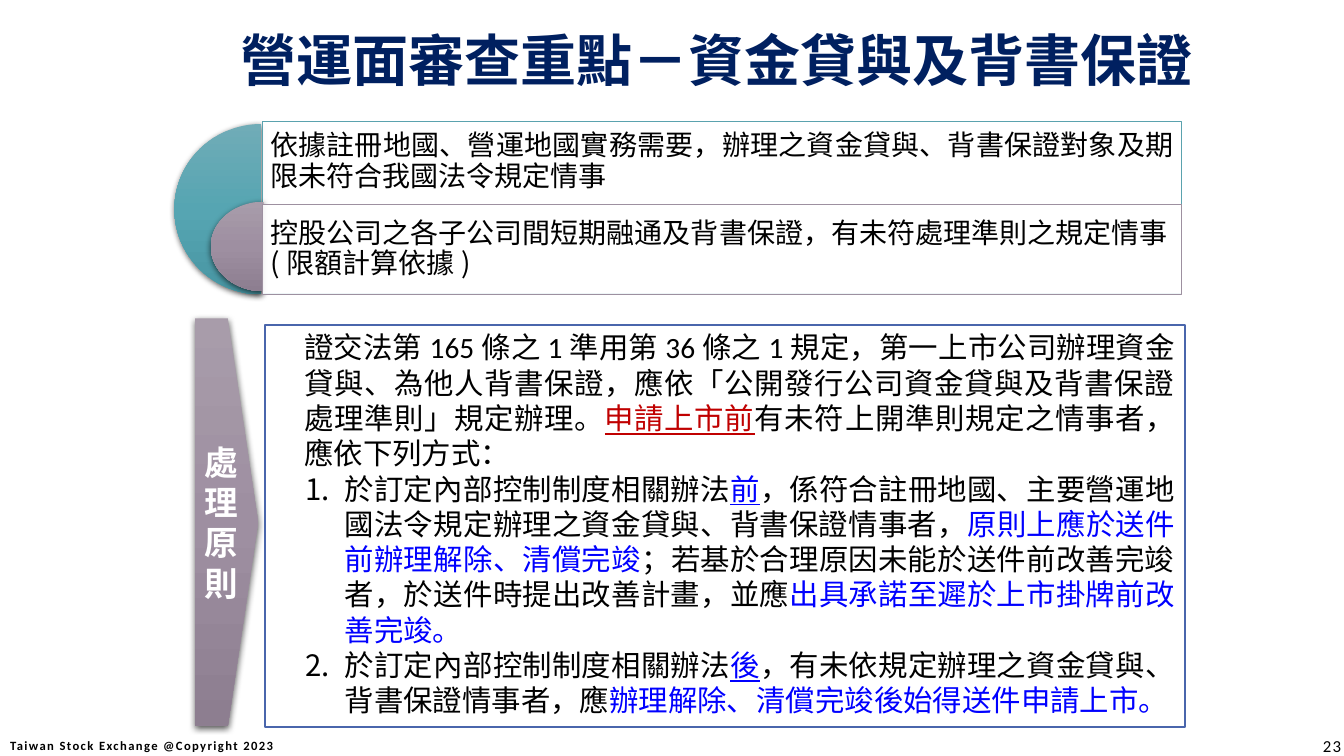
from copy import deepcopy

from lxml.etree import SubElement
from pptx import Presentation
from pptx.dml.color import RGBColor
from pptx.enum.shapes import MSO_SHAPE as Shape
from pptx.enum.text import MSO_ANCHOR as Anchor, PP_ALIGN as Align
from pptx.oxml.ns import qn
from pptx.util import Inches, Pt

BLACK = RGBColor(0x00, 0x00, 0x00)
WHITE = RGBColor(0xFF, 0xFF, 0xFF)
NAVY = RGBColor(0x00, 0x20, 0x60)
RED = RGBColor(0xC0, 0x00, 0x00)
BLUE = RGBColor(0x00, 0x00, 0xFF)
FRAME_BLUE = RGBColor(0x4A, 0x66, 0xAC)
TEAL = RGBColor(0x5A, 0xA2, 0xAE)
MAUVE = RGBColor(0x9D, 0x90, 0xA0)
TEAL_SHADES = [RGBColor(0x70, 0xAC, 0xB7), RGBColor(0x56, 0xA5, 0xB2), RGBColor(0x48, 0x96, 0xA3)]
MAUVE_SHADES = [RGBColor(0xA8, 0x9C, 0xAA), RGBColor(0x9E, 0x8F, 0xA1), RGBColor(0x8D, 0x7E, 0x90)]
CJK = "Noto Sans CJK SC"


def add_run(paragraph, text, size=21, font="Calibri", color=BLACK, bold=False,
            underline=False, spacing=0):
    run = paragraph.add_run()
    run.text = text
    run.font.size = Pt(size)
    run.font.name = font
    run.font.color.rgb = color
    run.font.bold = bold
    run.font.underline = underline
    properties = run.font._element
    if spacing:
        properties.set("spc", str(spacing * 100))
    SubElement(properties, qn("a:ea")).set("typeface", CJK)


def set_text(shape, runs, align=Align.CENTER, line_spacing=None, inset=None, **style):
    """Fill a shape with one paragraph; each run is (text, own format)."""
    frame = shape.text_frame
    frame.word_wrap = True
    frame.vertical_anchor = Anchor.MIDDLE
    if inset:
        frame.margin_left = frame.margin_right = Inches(inset)
        frame.margin_top = frame.margin_bottom = Inches(inset)
    paragraph = frame.paragraphs[0]
    paragraph.alignment = align
    paragraph.line_spacing = line_spacing
    for text, own in runs:
        add_run(paragraph, text, **{**style, **own})


def add_textbox(slide, box, text, **style):
    textbox = slide.shapes.add_textbox(*map(Inches, box))
    set_text(textbox, [(text, {})] if isinstance(text, str) else text, **style)


def add_shape(slide, kind, box, line=None, width=0.5):
    shape = slide.shapes.add_shape(kind, *map(Inches, box))
    shape.shadow.inherit = False
    shape.fill.background()
    if line is None:
        shape.line.fill.background()
    else:
        shape.line.color.rgb = line
        shape.line.width = Pt(width)
    return shape


def shade(shape, colors):
    """Vertical three-colour gradient with a soft shadow below."""
    shape.fill.gradient()
    shape.fill.gradient_angle = 270
    properties = shape._element.spPr
    stop_list = properties.find(".//" + qn("a:gsLst"))
    stop_list.insert(1, deepcopy(stop_list[0]))
    for index, (stop, color) in enumerate(zip(shape.fill.gradient_stops, colors)):
        stop.position = index / 2
        stop.color.rgb = color
    shadow = SubElement(properties.find(qn("a:effectLst")), qn("a:outerShdw"),
                        blurRad=str(Pt(4.5)), dist=str(Pt(1.5)), dir="5400000", rotWithShape="0")
    color = SubElement(shadow, qn("a:srgbClr"), val="000000")
    SubElement(color, qn("a:alpha"), val="63000")


def add_review_point(slide, pie_box, panel_box, text_height, shades, line, text):
    """Half disc with a bordered panel and its text."""
    pie = add_shape(slide, Shape.PIE, pie_box)
    pie.adjustments[0], pie.adjustments[1] = 54, 162
    shade(pie, shades)
    panel = add_shape(slide, Shape.RECTANGLE, panel_box, line)
    panel.fill.solid()
    panel.fill.fore_color.rgb = WHITE
    color = panel.fill._xPr.find(".//" + qn("a:srgbClr"))
    SubElement(color, qn("a:alpha"), val="90000")
    add_textbox(slide, (*panel_box[:3], text_height), text, align=Align.JUSTIFY,
                line_spacing=0.9, inset=0.08, size=20, font=CJK)


def add_principles(slide, left, top):
    # Arrow label
    arrow = add_shape(slide, Shape.PENTAGON, (left, top, 0.63, 4.04))
    arrow.adjustments[0] = 0.476
    shade(arrow, MAUVE_SHADES)
    set_text(arrow, [("處理原則", {})], size=24, font=CJK, color=WHITE, bold=True)

    # Framed explanation: an introduction and two numbered rules
    frame = add_shape(slide, Shape.RECTANGLE, (left + 0.7, top + 0.06, 9.12, 3.99),
                      FRAME_BLUE, 1.5).text_frame
    frame.word_wrap = True
    frame.vertical_anchor = Anchor.TOP
    for index, runs in enumerate(PRINCIPLES):
        paragraph = frame.paragraphs[0] if index == 0 else frame.add_paragraph()
        paragraph.alignment = Align.JUSTIFY
        properties = paragraph._p.get_or_add_pPr()
        properties.set("marL", str(Inches(0.69 if index else 0.29)))
        properties.set("indent", str(Inches(-0.39 if index else 0)))
        if index:
            SubElement(properties, qn("a:buFont"), typeface="+mj-lt")
            SubElement(properties, qn("a:buAutoNum"), type="arabicPeriod")
        for text, style in runs:
            add_run(paragraph, text, **style)


PLAIN = {}
STRESS = {"color": BLUE}
KEY = {"color": BLUE, "underline": True}
PRINCIPLES = [
    [("證交法第165條之1準用第36條之1規定，第一上市公司辦理資金貸與、為他人背書保證，"
      "應依「公開發行公司資金貸與及背書保證處理準則」規定辦理。", PLAIN),
     ("申請上市前", {"color": RED, "underline": True}),
     ("有未符上開準則規定之情事者，應依下列方式：", PLAIN)],
    [("於訂定內部控制制度相關辦法", PLAIN), ("前", KEY),
     ("，係符合註冊地國、主要營運地國法令規定辦理之資金貸與、背書保證情事者，", PLAIN),
     ("原則上應於送件前辦理解除、清償完竣", STRESS),
     ("；若基於合理原因未能於送件前改善完竣者，於送件時提出改善計畫，並應", PLAIN),
     ("出具承諾至遲於上市掛牌前改善完竣。", STRESS)],
    [("於訂定內部控制制度相關辦法", PLAIN), ("後", KEY),
     ("，有未依規定辦理之資金貸與、背書保證情事者，應", PLAIN),
     ("辦理解除、清償完竣後始得送件申請上市。", STRESS)],
]


def main():
    presentation = Presentation()
    presentation.slide_width, presentation.slide_height = Inches(13.33), Inches(7.5)
    slide = presentation.slides.add_slide(presentation.slide_layouts[6])

    # Footer and title
    add_textbox(slide, (-0.14, 7.2, 3.09, 0.4), "Taiwan Stock Exchange @Copyright 2023",
                size=9, bold=True, spacing=1)
    add_textbox(slide, (12.81, 7.2, 0.59, 0.4), "23", align=Align.RIGHT, size=12, spacing=1)
    add_textbox(slide, (2.03, 0.27, 10.15, 0.63),
                [("營運面審查重點", {}), ("－", {"font": CJK}), ("資金貸與及背書保證", {})],
                size=40, font="Vollkorn", color=NAVY, bold=True)

    # Review points
    add_review_point(slide, (1.73, 1.23, 1.72, 1.69), (2.6, 1.2, 9.12, 1.71), 0.81,
                     TEAL_SHADES, TEAL,
                     "依據註冊地國、營運地國實務需要，辦理之資金貸與、背書保證對象及期限未符合我國法令規定情事")
    add_review_point(slide, (2.09, 2, 1.05, 0.89), (2.6, 2.03, 9.12, 0.89), 0.89,
                     MAUVE_SHADES, MAUVE,
                     "控股公司之各子公司間短期融通及背書保證，有未符處理準則之規定情事(限額計算依據)")

    # Handling principles
    add_principles(slide, 1.93, 3.16)
    presentation.save("out.pptx")


if __name__ == "__main__":
    main()
